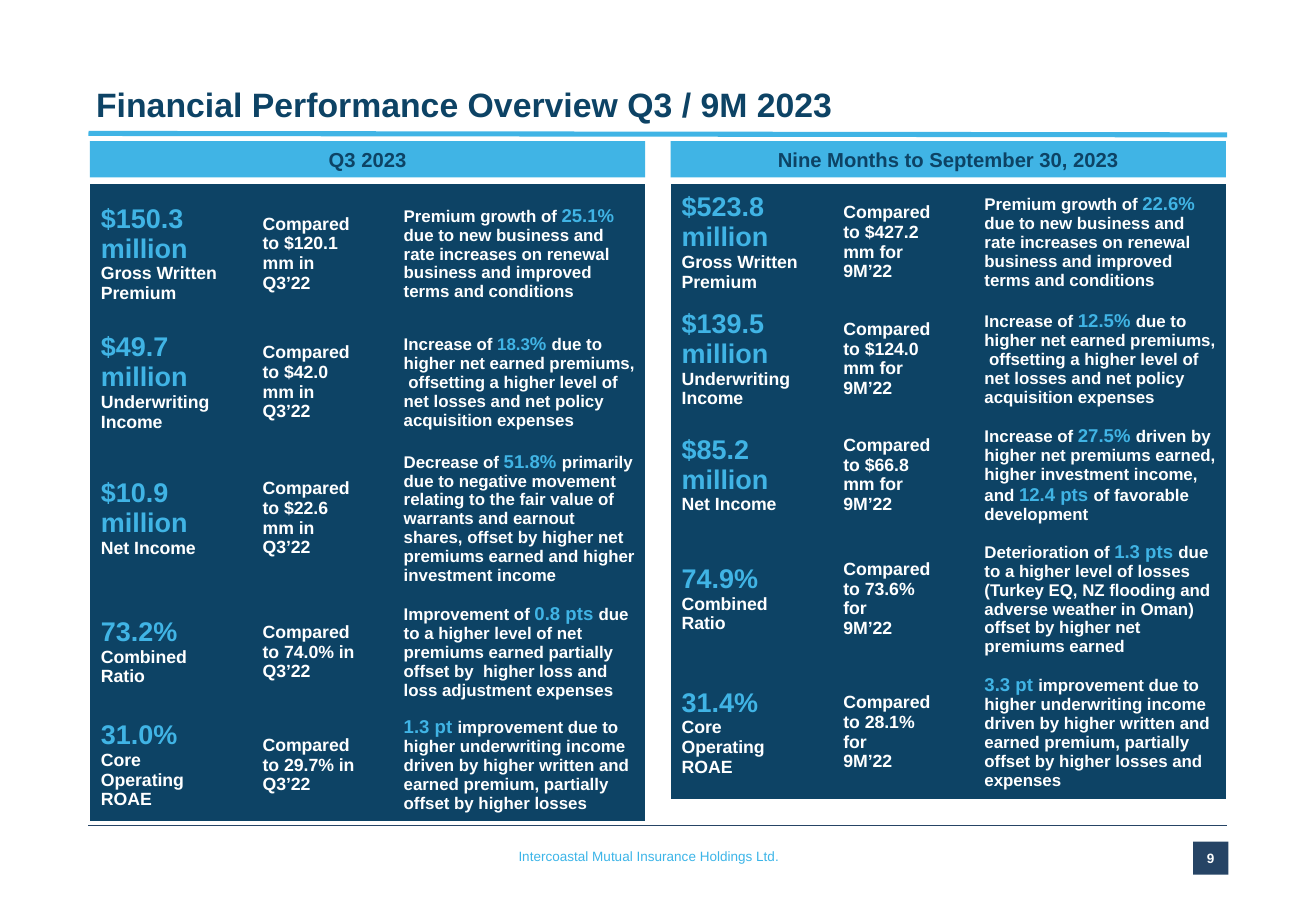
from lxml.etree import SubElement
from pptx import Presentation
from pptx.dml.color import RGBColor
from pptx.enum.shapes import MSO_CONNECTOR as Connector, MSO_SHAPE as Shape
from pptx.enum.text import MSO_ANCHOR as Anchor, PP_ALIGN as Align
from pptx.oxml.ns import qn
from pptx.util import Cm, Pt

TITLE = "Financial Performance Overview Q3 / 9M 2023"
FOOTER = "Intercoastal Mutual Insurance Holdings Ltd."
PAGE_NUMBER = "9"
COLORS = {"navy": "0D4365", "sky": "40B4E5", "footer": "3CB5E8",
          "slate": "264465", "white": "FFFFFF"}
FONT = "Arial"

# Each row: height, figure, measure, comparison, comment.
# In a comment, a (text, size) pair is a highlighted figure.
PANELS = [
    ("Q3 2023", [
        (2.92, "$150.3 million", "Gross Written Premium", "Compared to $120.1 mm in Q3’22",
         ["Premium growth of ", ("25.1% ", 11),
          "due to new business and rate increases on renewal business and improved "
          "terms and conditions"]),
        (2.46, "$49.7 million", "Underwriting Income", "Compared to $42.0 mm in Q3’22",
         ["Increase of ", ("18.3", 10), ("% ", 11),
          "due to higher net earned premiums,  offsetting a higher level of net losses "
          "and net policy acquisition expenses"]),
        (3.23, "$10.9 million", "Net Income", "Compared to $22.6 mm in Q3’22",
         ["Decrease of ", ("51.8% ", 11),
          "primarily due to negative movement relating to the fair value of warrants and "
          "earnout shares, offset by higher net premiums earned and higher investment income"]),
        (2.36, "73.2%", "Combined Ratio", "Compared to 74.0% in \vQ3’22",
         ["Improvement of ", ("0.8 pts ", 11),
          "due to a higher level of net premiums earned partially offset by  higher loss "
          "and loss adjustment expenses"]),
        (2.36, "31.0%", "Core Operating ROAE", "Compared to 29.7% in \vQ3’22",
         [("1.3 pt ", 11),
          "improvement due to higher underwriting income driven by higher written and "
          "earned premium, partially offset by higher losses"]),
    ]),
    ("Nine Months to September 30, 2023", [
        (1.78, "$523.8 million", "Gross Written Premium", "Compared to $427.2 mm for 9M’22",
         ["Premium growth of ", ("22.6% ", 11),
          "due to new business and rate increases on renewal business and improved "
          "terms and conditions"]),
        (1.96, "$139.5 million", "Underwriting Income", "Compared to $124.0 mm for 9M’22",
         ["Increase of ", ("12.5% ", 11),
          "due to higher net earned premiums,  offsetting a higher level of net losses "
          "and net policy acquisition expenses"]),
        (1.68, "$85.2 million", "Net Income", "Compared to $66.8 mm for 9M’22",
         ["Increase of ", ("27.5% ", 11),
          "driven by higher net premiums earned, higher investment income, and ",
          ("12.4 pts ", 11), "of favorable development"]),
        (1.88, "74.9%", "Combined Ratio", "Compared to 73.6% for \v9M’22",
         ["Deterioration of ", ("1.3 pts ", 11),
          "due to a higher level of losses (Turkey EQ, NZ flooding and adverse weather "
          "in Oman) offset by higher net premiums earned"]),
        (1.75, "31.4%", "Core Operating ROAE", "Compared to 28.1% for \v9M’22",
         [("3.3 pt ", 11),
          "improvement due to higher underwriting income driven by higher written and "
          "earned premium, partially offset by higher losses and expenses"]),
    ]),
]

LEFT, RIGHT = 1.85, 25.65
PANEL_LEFT, PANEL_STEP = 1.88, 12.14
HEADER_TOP, TABLE_TOP = 2.95, 3.84
COLUMN_WIDTHS = [2.9, 2.95, 5.76]
NO_STYLE = "{2D5ABB26-0587-4C30-8999-92F81FD0307C}"


def rgb(name):
    return RGBColor.from_string(COLORS[name])


def set_font(font, size, color, bold=True):
    font.name, font.size, font.bold = FONT, Pt(size), bold
    font.color.rgb = rgb(color)


def write(paragraph, text, size, color, bold=True):
    paragraph.text = text
    set_font(paragraph.font, size, color, bold)


def add_rule(slide, y_start, y_end, color, width):
    rule = slide.shapes.add_connector(
        Connector.STRAIGHT, Cm(LEFT), Cm(y_start), Cm(RIGHT), Cm(y_end))
    rule.line.color.rgb = rgb(color)
    rule.line.width = Pt(width)
    SubElement(rule._element.spPr, qn("a:effectLst"))


def add_text(slide, box, text, size, color, bold, anchor):
    frame = slide.shapes.add_textbox(*map(Cm, box)).text_frame
    frame.word_wrap = True
    frame.vertical_anchor = anchor
    write(frame.paragraphs[0], text, size, color, bold)
    return frame


def add_label(slide, box, text, size, fill, color):
    """Add a filled rectangle with centred text."""
    shape = slide.shapes.add_shape(Shape.RECTANGLE, *map(Cm, box))
    shape.shadow.inherit = False
    shape.fill.solid()
    shape.fill.fore_color.rgb = rgb(fill)
    shape.line.fill.background()
    frame = shape.text_frame
    frame.margin_left = frame.margin_right = 0
    frame.vertical_anchor = Anchor.MIDDLE
    paragraph = frame.paragraphs[0]
    paragraph.alignment = Align.CENTER
    write(paragraph, text, size, color)


def style_cell(cell, side_margin, indent):
    cell.fill.solid()
    cell.fill.fore_color.rgb = rgb("navy")
    cell.vertical_anchor = Anchor.MIDDLE
    cell.margin_left = cell.margin_right = Cm(side_margin)
    cell.margin_top = cell.margin_bottom = Cm(0.1)
    properties = cell.text_frame.paragraphs[0]._p.get_or_add_pPr()
    properties.set("marL", str(Cm(indent)))
    properties.set("indent", "0")


def fill_row(cells, figure, measure, comparison, comment):
    for cell, margin, indent in zip(cells, (0.23, 0.2, 0.2), (0, 0.51, 0.51)):
        style_cell(cell, margin, indent)
    figure_cell, comparison_cell, comment_cell = cells
    write(figure_cell.text_frame.paragraphs[0], figure, 16, "sky")
    write(figure_cell.text_frame.add_paragraph(), measure, 10.5, "white")
    write(comparison_cell.text_frame.paragraphs[0], comparison, 10.5, "white")
    for part in comment:
        run = comment_cell.text_frame.paragraphs[0].add_run()
        if isinstance(part, tuple):
            run.text, size = part
            set_font(run.font, size, "sky")
        else:
            run.text = part
            set_font(run.font, 10, "white")


def add_panel(slide, left, heading, rows):
    width = sum(COLUMN_WIDTHS)
    height = sum(row[0] for row in rows)
    table = slide.shapes.add_table(len(rows), len(COLUMN_WIDTHS), Cm(left), Cm(TABLE_TOP),
                                   Cm(width), Cm(height)).table
    table.first_row = table.horz_banding = False
    table._tbl.tblPr.find(qn("a:tableStyleId")).text = NO_STYLE
    for column, column_width in zip(table.columns, COLUMN_WIDTHS):
        column.width = Cm(column_width)
    for table_row, (row_height, *content) in zip(table.rows, rows):
        table_row.height = Cm(row_height)
        fill_row(list(table_row.cells), *content)
    add_label(slide, (left, HEADER_TOP, width, 0.76), heading, 12, "sky", "navy")


def main():
    presentation = Presentation()
    presentation.slide_width, presentation.slide_height = Cm(27.51), Cm(19.05)
    slide = presentation.slides.add_slide(presentation.slide_layouts[6])
    add_rule(slide, 2.79, 2.82, "sky", 3)
    add_rule(slide, 17.27, 17.27, "slate", 0.5)
    add_label(slide, (24.94, 17.6, 0.74, 0.69), PAGE_NUMBER, 8, "slate", "white")
    add_text(slide, (10.59, 17.6, 6.3, 0.61), FOOTER, 8, "footer", False, Anchor.TOP)
    title = add_text(slide, (1.88, 1.52, 23.72, 1.42), TITLE, 20, "navy", True, Anchor.MIDDLE)
    title.margin_left = Cm(0.13)
    title.paragraphs[0].line_spacing = 0.9
    for index, (heading, rows) in enumerate(PANELS):
        add_panel(slide, PANEL_LEFT + index * PANEL_STEP, heading, rows)
    presentation.save("out.pptx")


if __name__ == "__main__":
    main()
